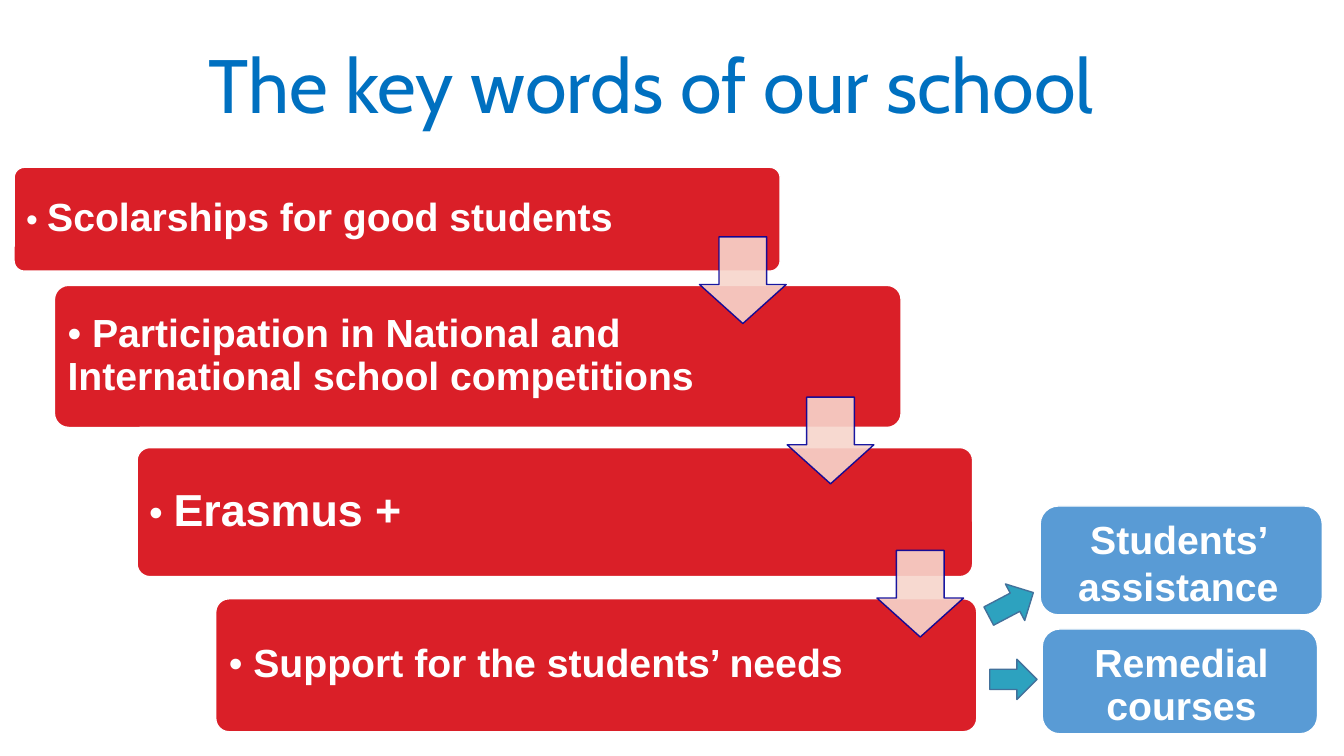
from pptx import Presentation
from pptx.dml.color import RGBColor
from pptx.enum.shapes import MSO_SHAPE as SHAPE
from pptx.enum.text import MSO_ANCHOR as ANCHOR, PP_ALIGN as ALIGN
from pptx.oxml.ns import qn
from pptx.util import Pt
from lxml import etree


def add_filled(kind, box, adjustments, fill, line):
    sp = s.shapes.add_shape(kind, *[Pt(v) for v in box])
    sp.shadow.inherit = False
    for i, value in enumerate(adjustments):
        sp.adjustments[i] = value
    for target, color in ((sp.fill, fill), (sp.line.fill, line)):
        target.solid()
        target.fore_color.rgb = RGBColor.from_string(color)
    sp.line.width = Pt(1)
    return sp


def add_label(sp, margins, align, spacing, paragraphs):
    """Margins run left, top, right, bottom from the outer edge of the shape."""
    # A rounded rectangle already keeps its text clear of the corners.
    corner = 0.293 * sp.adjustments[0] * sp.height.pt
    tf = sp.text_frame
    tf.word_wrap = True
    tf.vertical_anchor = ANCHOR.MIDDLE
    (tf.margin_left, tf.margin_top,
     tf.margin_right, tf.margin_bottom) = [Pt(m - corner) for m in margins]
    for i, runs in enumerate(paragraphs):
        p = tf.add_paragraph() if i else tf.paragraphs[0]
        p.alignment = align
        p.line_spacing = spacing
        for text, size, bold in runs:
            r = p.add_run()
            r.text = text
            r.font.name = "Arial"
            r.font.size = Pt(size)
            r.font.bold = bold
            r.font.color.rgb = RGBColor.from_string("FFFFFF")


prs = Presentation()
prs.slide_width, prs.slide_height = Pt(960), Pt(540)
s = prs.slides.add_slide(prs.slide_layouts[5])

# Title
title = s.shapes.title
title.left, title.top, title.width, title.height = Pt(97.2), Pt(23), Pt(735.8), Pt(81.4)
tf = title.text_frame
tf.word_wrap = True
tf.vertical_anchor = ANCHOR.MIDDLE
p = tf.paragraphs[0]
p.alignment = ALIGN.CENTER
p.line_spacing = 0.9
r = p.add_run()
r.text = "The key words of our school"
r.font.name = "Cabin"
r.font.size = Pt(54)
r.font.color.rgb = RGBColor.from_string("0070C0")

# Staircase of key words: box, text width, margin, bullet size, text size, text
key_words = [
    ((10.1, 119.5, 547.2, 74.2), 440.6, 8.6, 24, 28, "Scolarships for good students"),
    ((38.9, 203.8, 604.8, 101.5), 485.3, 9.4, 28, 28,
     "Participation in National and International school competitions"),
    ((97.9, 319.7, 596.9, 92.2), 478.8, 8.6, 28, 32, "Erasmus +"),
    ((154.1, 427.7, 543.6, 95), 489.6, 9.4, 28, 28, "Support for the students’ needs"),
]
for box, text_width, margin, bullet_size, size, text in key_words:
    bar = add_filled(SHAPE.ROUNDED_RECTANGLE, box, [0.1], "DA1F28", "FFFFFF")
    right = box[2] - text_width + margin
    add_label(bar, (margin, margin, right, margin), ALIGN.LEFT, 0.9,
              [[("• ", bullet_size, False), (text, size, True)]])

# Translucent arrows from step to step
for left, top in ((499.7, 169.2), (562.3, 283.7), (626.4, 393.1)):
    arrow = add_filled(SHAPE.DOWN_ARROW, (left, top, 61.9, 61.9), [0.55, 0.45],
                       "F7D5CB", "000099")
    for color in arrow._element.spPr.iter(qn("a:srgbClr")):
        etree.SubElement(color, qn("a:alpha")).set("val", "90000")

# Kinds of support, with the arrows that lead to them
for box, rotation in (((707, 470.9, 33.8, 28.8), 0), ((704.2, 416.9, 36, 29.5), 332.2)):
    arrow = add_filled(SHAPE.RIGHT_ARROW, box, [0.5, 0.5], "2DA2BF", "42719B")
    arrow.rotation = rotation

supports = [
    ((743, 361.4, 201.6, 77.8), (21.6, 17.3, 25.9, 14.4), 1, ["Students’ assistance"]),
    ((744.5, 449.3, 196.6, 74.9), (13, 11.5, 10.8, 4.3), 0.9, ["Remedial", "courses"]),
]
for box, margins, spacing, lines in supports:
    card = add_filled(SHAPE.ROUNDED_RECTANGLE, box, [0.167], "599BD5", "FFFFFF")
    add_label(card, margins, ALIGN.CENTER, spacing, [[(line, 28, True)] for line in lines])

prs.save("out.pptx")
